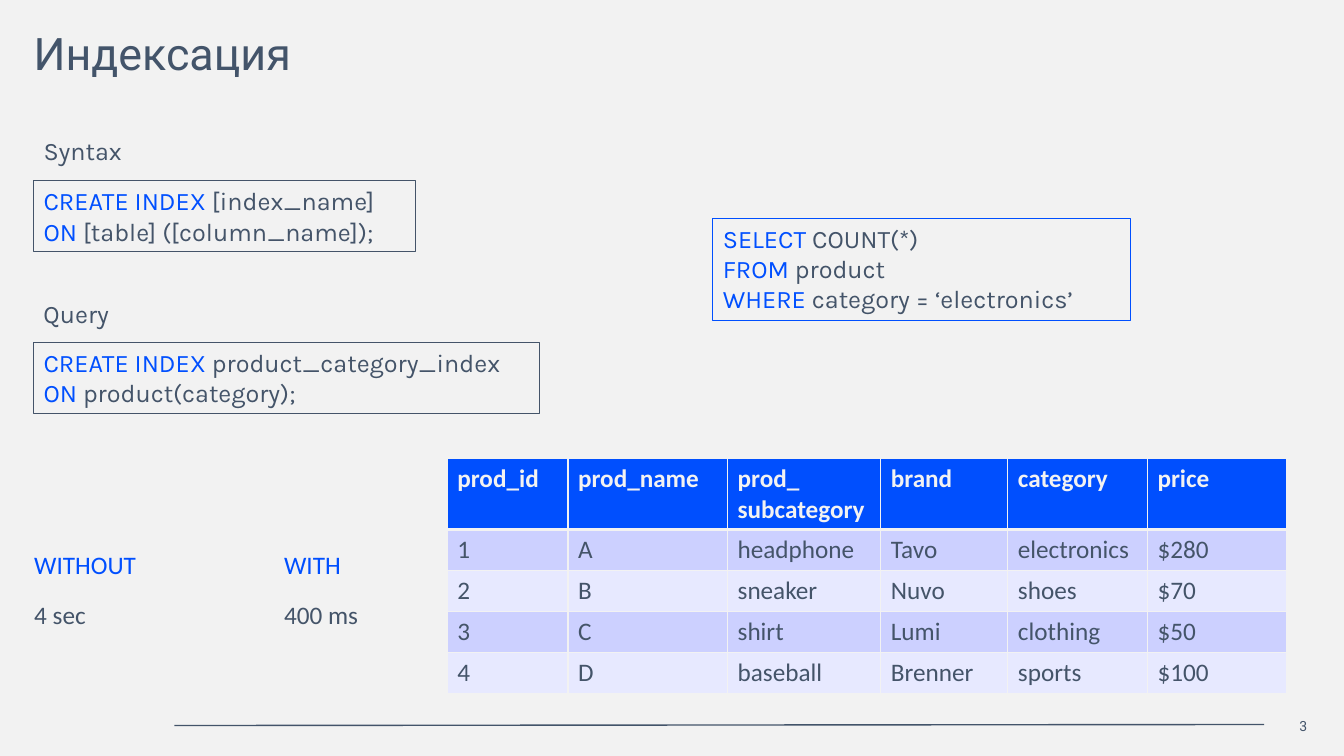
from dataclasses import dataclass
from typing import Optional

from lxml.etree import SubElement
from pptx import Presentation
from pptx.dml.color import RGBColor
from pptx.enum.shapes import MSO_CONNECTOR, MSO_SHAPE
from pptx.enum.text import MSO_ANCHOR, PP_ALIGN
from pptx.oxml.ns import qn
from pptx.slide import Slide
from pptx.table import Table, _Cell
from pptx.text.text import TextFrame
from pptx.util import Emu, Pt

PAPER = RGBColor(0xF2, 0xF2, 0xF2)
SLATE = RGBColor(0x43, 0x54, 0x6A)
INK = RGBColor(0x44, 0x54, 0x69)
BLUE = RGBColor(0x00, 0x4F, 0xFF)
HEADER = RGBColor(0x00, 0x4F, 0xFE)
BANDS = (RGBColor(0xCC, 0xD0, 0xFF), RGBColor(0xE7, 0xE9, 0xFF))
NO_GRID_STYLE = "{2D5ABB26-0587-4C30-8999-92F81FD0307C}"

Line = list[tuple[str, RGBColor]]


@dataclass(frozen=True)
class Box:
    x: int
    y: int
    w: int
    h: int
    lines: list[Line]
    border: Optional[RGBColor] = None
    font: str = "Karla"
    size: int = 18
    inset: bool = True
    align: PP_ALIGN = PP_ALIGN.LEFT
    anchor: MSO_ANCHOR = MSO_ANCHOR.TOP


BOXES = [
    Box(1204, 682, 41, 18, [[("3", SLATE)]], font="Roboto", size=10,
        inset=False, align=PP_ALIGN.RIGHT, anchor=MSO_ANCHOR.MIDDLE),
    Box(32, 25, 1011, 52, [[("Индексация", SLATE)]], font="Roboto", size=32,
        inset=False),
    Box(679, 208, 398, 97, [
        [("SELECT", BLUE), (" COUNT(*)", INK)],
        [("FROM", BLUE), (" product", INK)],
        [("WHERE", BLUE), (" category = ‘electronics’", INK)],
    ], border=BLUE),
    Box(32, 172, 364, 68, [
        [("CREATE INDEX", BLUE), (" [index_name]", INK)],
        [("ON ", BLUE), ("[table] ([column_name]);", INK)],
    ], border=INK),
    Box(32, 326, 482, 68, [
        [("CREATE INDEX", BLUE), (" product_category_index", INK)],
        [("ON ", BLUE), ("product(category);", INK)],
    ], border=INK),
    Box(32, 124, 99, 38, [[("Syntax", INK)]]),
    Box(32, 279, 91, 38, [[("Query", INK)]]),
]

PRODUCTS = [
    ["prod_id", "prod_name", "prod_\nsubcategory", "brand", "category", "price"],
    ["1", "A", "headphone", "Tavo", "electronics", "$280"],
    ["2", "B", "sneaker", "Nuvo", "shoes", "$70"],
    ["3", "C", "shirt", "Lumi", "clothing", "$50"],
    ["4", "D", "baseball", "Brenner", "sports", "$100"],
]
TIMINGS = [["WITHOUT", "", "WITH"], ["4 sec", "", "400 ms"]]


def px(n: int) -> Emu:
    return Emu(n * 9525)


def write(tf: TextFrame, lines: list[Line], *, font: str, size: int,
          bold: bool = False, align: PP_ALIGN = PP_ALIGN.LEFT) -> None:
    for i, line in enumerate(lines):
        p = tf.paragraphs[0] if i == 0 else tf.add_paragraph()
        p.alignment = align
        for text, color in line:
            r = p.add_run()
            r.text = text
            r.font.name = font
            r.font.size = Pt(size)
            r.font.bold = bold
            r.font.color.rgb = color


def add_box(s: Slide, box: Box) -> None:
    area = px(box.x), px(box.y), px(box.w), px(box.h)
    if box.border is None:
        sp = s.shapes.add_textbox(*area)
    else:
        sp = s.shapes.add_shape(MSO_SHAPE.RECTANGLE, *area)
        sp.shadow.inherit = False
        sp.fill.background()
        sp.line.color.rgb = box.border
        sp.line.width = Pt(0.75)
    tf = sp.text_frame
    tf.word_wrap = True
    tf.vertical_anchor = box.anchor
    if not box.inset:
        tf.margin_left = tf.margin_top = tf.margin_right = tf.margin_bottom = 0
    write(tf, box.lines, font=box.font, size=box.size, align=box.align)


def add_rule(s: Slide, x1: int, y1: int, x2: int, y2: int) -> None:
    cx = s.shapes.add_connector(MSO_CONNECTOR.STRAIGHT, px(x1), px(y1), px(x2), px(y2))
    cx.line.color.rgb = SLATE
    cx.line.width = Pt(1)
    SubElement(cx._element.spPr, qn("a:effectLst"))


def add_plain_table(s: Slide, x: int, y: int, widths: list[int], heights: list[int]) -> Table:
    frame = s.shapes.add_table(len(heights), len(widths), px(x), px(y),
                               px(sum(widths)), px(sum(heights)))
    table = frame.table
    table.first_row = table.horz_banding = False
    table._tbl.tblPr.find(qn("a:tableStyleId")).text = NO_GRID_STYLE
    for column, width in zip(table.columns, widths):
        column.width = px(width)
    for row, height in zip(table.rows, heights):
        row.height = px(height)
    return table


def set_borders(cell: _Cell, *, top: int, bottom: int) -> None:
    tcPr = cell._tc.get_or_add_tcPr()
    for side, width in (("L", 1), ("R", 1), ("T", top), ("B", bottom)):
        ln = SubElement(tcPr, qn(f"a:ln{side}"), w=str(Pt(width)))
        SubElement(SubElement(ln, qn("a:solidFill")), qn("a:srgbClr"), val=str(PAPER))


def add_products(s: Slide) -> None:
    table = add_plain_table(s, 426, 437, [115, 152, 146, 121, 133, 133], [67] + [39] * 4)
    for i, row in enumerate(PRODUCTS):
        head = i == 0
        for j, text in enumerate(row):
            cell = table.cell(i, j)
            set_borders(cell, top=3 if i == 1 else 1, bottom=3 if head else 1)
            cell.fill.solid()
            cell.fill.fore_color.rgb = HEADER if head else BANDS[(i - 1) % 2]
            lines = [[(part, PAPER if head else INK)] for part in text.split("\n")]
            write(cell.text_frame, lines, font="Calibri", size=18, bold=head)


def add_timings(s: Slide) -> None:
    table = add_plain_table(s, 23, 519, [119] * 3, [48] * 2)
    for i, row in enumerate(TIMINGS):
        for j, text in enumerate(row):
            if text:
                write(table.cell(i, j).text_frame, [[(text, INK if i else BLUE)]],
                      font="Calibri", size=18)


def main() -> None:
    prs = Presentation()
    prs.slide_width, prs.slide_height = px(1280), px(720)
    s = prs.slides.add_slide(prs.slide_layouts[6])
    s.background.fill.solid()
    s.background.fill.fore_color.rgb = PAPER
    add_rule(s, 166, 691, 1204, 690)
    for box in BOXES:
        add_box(s, box)
    add_products(s)
    add_timings(s)
    prs.save("out.pptx")


if __name__ == "__main__":
    main()
